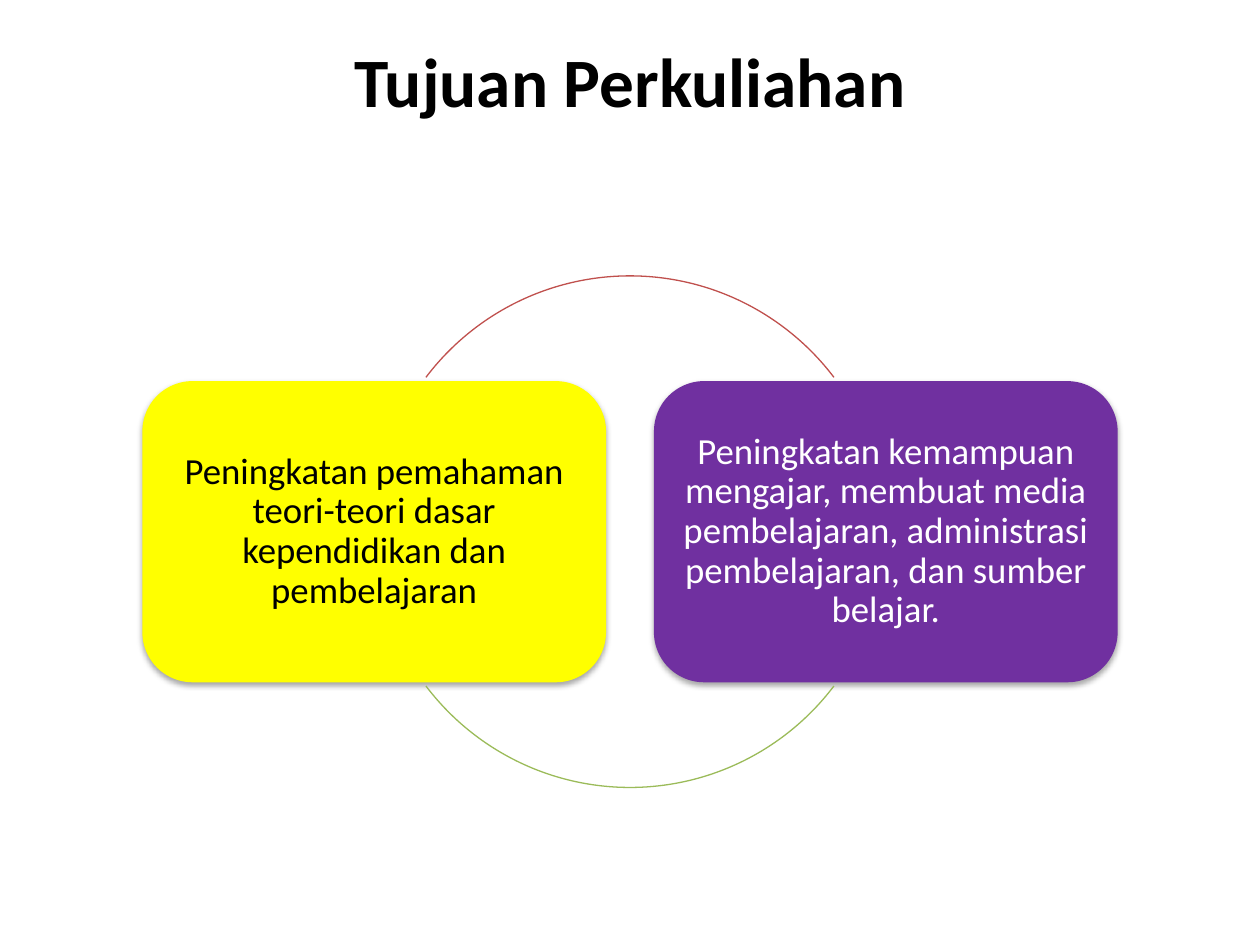
from lxml import etree
from pptx import Presentation
from pptx.dml.color import RGBColor
from pptx.enum import shapes, text
from pptx.oxml import ns
from pptx.util import Inches, Pt

BLACK = RGBColor(0x00, 0x00, 0x00)
WHITE = RGBColor(0xFF, 0xFF, 0xFF)
YELLOW = RGBColor(0xFF, 0xFF, 0x00)
PURPLE = RGBColor(0x70, 0x30, 0xA0)
RED = RGBColor(0xC0, 0x50, 0x4D)
GREEN = RGBColor(0x9B, 0xBB, 0x59)

GOALS = [
    ("Peningkatan pemahaman teori-teori dasar kependidikan dan pembelajaran",
     YELLOW, BLACK),
    ("Peningkatan kemampuan mengajar, membuat media pembelajaran, "
     "administrasi pembelajaran, dan sumber belajar.", PURPLE, WHITE),
]


def write_text(shape, content, size, color, bold=False, spacing=1.0,
               anchor=text.MSO_ANCHOR.MIDDLE, margins=(0.09, 0.09)):
    """Fill a shape with one centred paragraph; margins are (side, top/bottom)."""
    frame = shape.text_frame
    frame.word_wrap = True
    frame.auto_size = text.MSO_AUTO_SIZE.NONE
    frame.vertical_anchor = anchor
    frame.margin_left = frame.margin_right = Inches(margins[0])
    frame.margin_top = frame.margin_bottom = Inches(margins[1])
    paragraph = frame.paragraphs[0]
    paragraph.alignment = text.PP_ALIGN.CENTER
    paragraph.line_spacing = spacing
    run = paragraph.add_run()
    run.text = content
    run.font.name = "Calibri"
    run.font.size = Pt(size)
    run.font.bold = bold
    run.font.color.rgb = color


def add_soft_shadow(shape):
    shape.shadow.inherit = False
    effects = shape._element.spPr.find(ns.qn("a:effectLst"))
    shadow = etree.SubElement(effects, ns.qn("a:outerShdw"), blurRad=str(Pt(3.1)),
                              dist=str(Pt(1.8)), dir="5400000", rotWithShape="0")
    color = etree.SubElement(shadow, ns.qn("a:srgbClr"), val="000000")
    etree.SubElement(color, ns.qn("a:alpha"), val="35000")


def add_title(slide, left, top, width, height):
    title = slide.shapes.title
    title.left, title.top = Inches(left), Inches(top)
    title.width, title.height = Inches(width), Inches(height)
    write_text(title, "Tujuan Perkuliahan", 39.6, BLACK, bold=True,
               anchor=text.MSO_ANCHOR.TOP, margins=(0.1, 0))


def add_arc(slide, left, top, size, start, end, color):
    """Draw part of a circle, clockwise between two angles in degrees."""
    arc = slide.shapes.add_shape(shapes.MSO_SHAPE.ARC, Inches(left), Inches(top),
                                 Inches(size), Inches(size))
    for index, angle in enumerate((start, end)):
        # Angles are stored in 1/60000 degree, adjustments in 1/100000
        arc.adjustments[index] = angle * 0.6
    arc.fill.background()
    arc.line.color.rgb = color
    arc.line.width = Pt(0.75)
    arc.shadow.inherit = False


def add_goal(slide, left, top, width, height, content, fill, color):
    box = slide.shapes.add_shape(shapes.MSO_SHAPE.ROUNDED_RECTANGLE, Inches(left),
                                 Inches(top), Inches(width), Inches(height))
    box.fill.solid()
    box.fill.fore_color.rgb = fill
    box.line.fill.background()
    add_soft_shadow(box)
    write_text(box, content, 21, color, spacing=0.9)


def add_goal_cycle(slide, left, top, width, height):
    """Two boxes side by side, joined by arcs of a circle filling the height."""
    box_width, box_height = 3.68, 2.39
    box_top = top + (height - box_height) / 2
    step = width - box_width
    for index, goal in enumerate(GOALS):
        add_goal(slide, left + index * step, box_top, box_width, box_height, *goal)

    circle_left = left + (width - height) / 2
    tilt = 37.1  # angle above or below the horizontal where an arc meets a box
    for start, end, color in ((180 + tilt, 360 - tilt, RED),
                              (tilt, 180 - tilt, GREEN)):
        add_arc(slide, circle_left, top, height, start, end, color)


def main():
    presentation = Presentation()
    presentation.slide_width, presentation.slide_height = Inches(10), Inches(7.5)
    slide = presentation.slides.add_slide(presentation.slide_layouts[5])
    add_title(slide, 0.5, 0.3, 9, 1.25)
    add_goal_cycle(slide, 1.13, 2.19, 7.74, 4.06)
    presentation.save("out.pptx")


if __name__ == "__main__":
    main()
